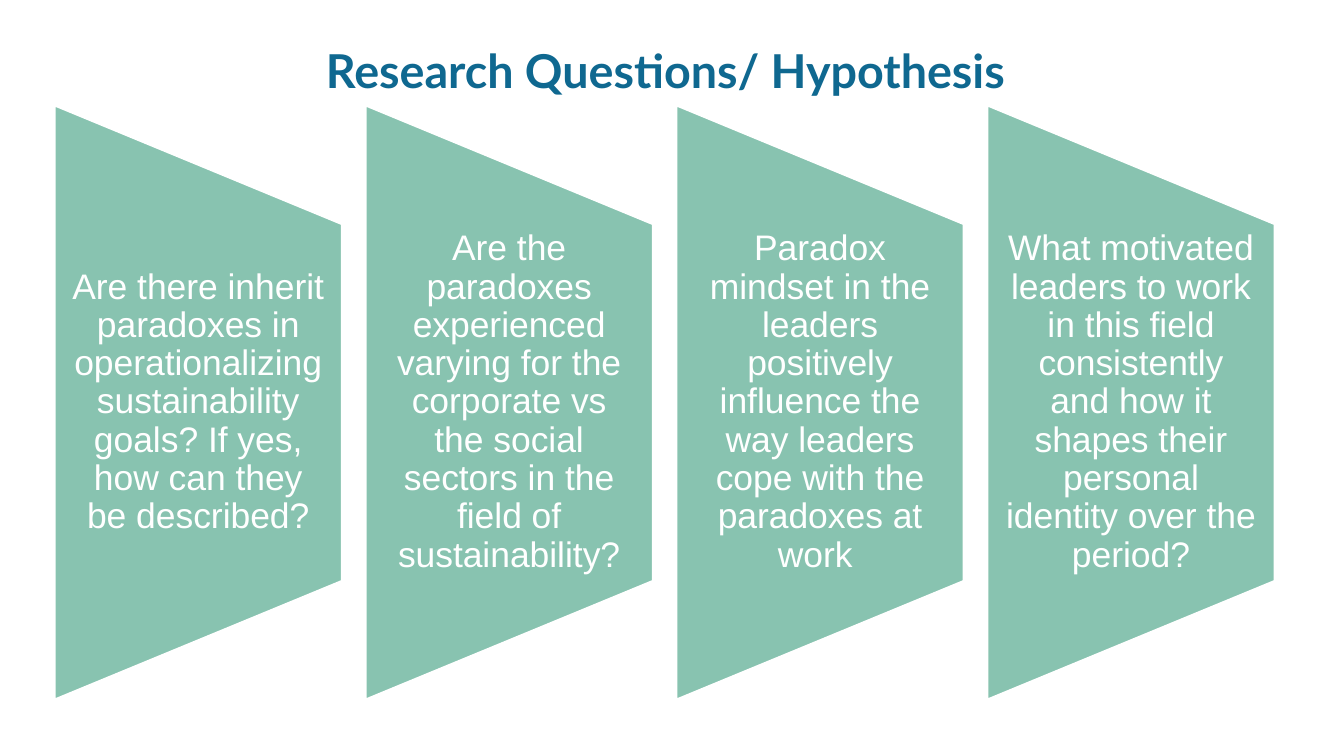
from pptx import Presentation
from pptx.dml.color import RGBColor
from pptx.enum.shapes import MSO_SHAPE as Shape
from pptx.enum.text import MSO_ANCHOR as Anchor, MSO_AUTO_SIZE as Fit, PP_ALIGN as Align
from pptx.util import Inches, Pt

ASKS = [
    "Are there inherit paradoxes in operationalizing sustainability goals? If yes, how can they be described?",
    "Are the paradoxes experienced varying for the corporate vs the social sectors in the field of sustainability?",
    "Paradox mindset in the leaders positively influence the way leaders cope with the paradoxes at work ",
    "What motivated leaders to work in this field consistently and how it shapes their personal identity over the period?",
]
LEFT, LAST, TOP = 0.4, 7.34, 1.66
WIDE, TALL, DEEP = 2.15, 4.44, 2.67
STEP = (LAST - LEFT) / (len(ASKS) - 1)
MID = TOP + DEEP / 2
HEAD = {"name": "Lato", "size": Pt(25), "bold": True}
BODY = {"name": "Arial", "size": Pt(19), "bold": False}


def tint(part, code):
    """Set a colour format from a hex string."""
    part.rgb = RGBColor.from_string(code)


def apply(item, form):
    """Set each attribute of an item from a dict."""
    for key, val in form.items():
        setattr(item, key, val)


def write(box, text, form, code, side=0, lead=1.0):
    """Fill a box with one centred, formatted paragraph."""
    frame = box.text_frame
    apply(frame, {
        "word_wrap": True, "auto_size": Fit.NONE, "vertical_anchor": Anchor.MIDDLE,
        "margin_left": Pt(side), "margin_right": Pt(side),
        "margin_top": 0, "margin_bottom": 0,
    })
    para = frame.paragraphs[0]
    apply(para, {"alignment": Align.CENTER, "line_spacing": lead})
    run = para.add_run()
    run.text = text
    apply(run.font, form)
    tint(run.font.color, code)


def add_title(slide, text):
    """Place and fill the title placeholder."""
    title = slide.shapes.title
    apply(title, {"left": Inches(0.78), "top": Inches(0.27),
                  "width": Inches(8.34), "height": Inches(0.5)})
    write(title, text, HEAD, "0F6890")


def add_panel(shapes, left, text):
    """Draw a turned trapezoid with its question on top."""
    panel = shapes.add_shape(
        Shape.FLOWCHART_MANUAL_OPERATION, Inches(left + (WIDE - TALL) / 2),
        Inches(MID - WIDE / 2), Inches(TALL), Inches(WIDE))
    panel.rotation = 270
    panel.shadow.inherit = False
    panel.fill.solid()
    tint(panel.fill.fore_color, "88C3B0")
    tint(panel.line.color, "FFFFFF")
    panel.line.width = Pt(2)
    box = shapes.add_textbox(
        Inches(left), Inches(TOP), Inches(WIDE), Inches(DEEP))
    write(box, text, BODY, "FFFFFF", side=9.6, lead=0.9)


def main():
    """Build the slide and save it."""
    deck = Presentation()
    apply(deck, {"slide_width": Inches(10), "slide_height": Inches(10 * 9 / 16)})
    slide = deck.slides.add_slide(deck.slide_layouts[0])
    sub = slide.placeholders[1].element
    sub.getparent().remove(sub)
    add_title(slide, "Research Questions/ Hypothesis")
    group = slide.shapes.add_group_shape()
    for num, ask in enumerate(ASKS):
        add_panel(group.shapes, LEFT + num * STEP, ask)
    deck.save("out.pptx")


if __name__ == "__main__":
    main()
